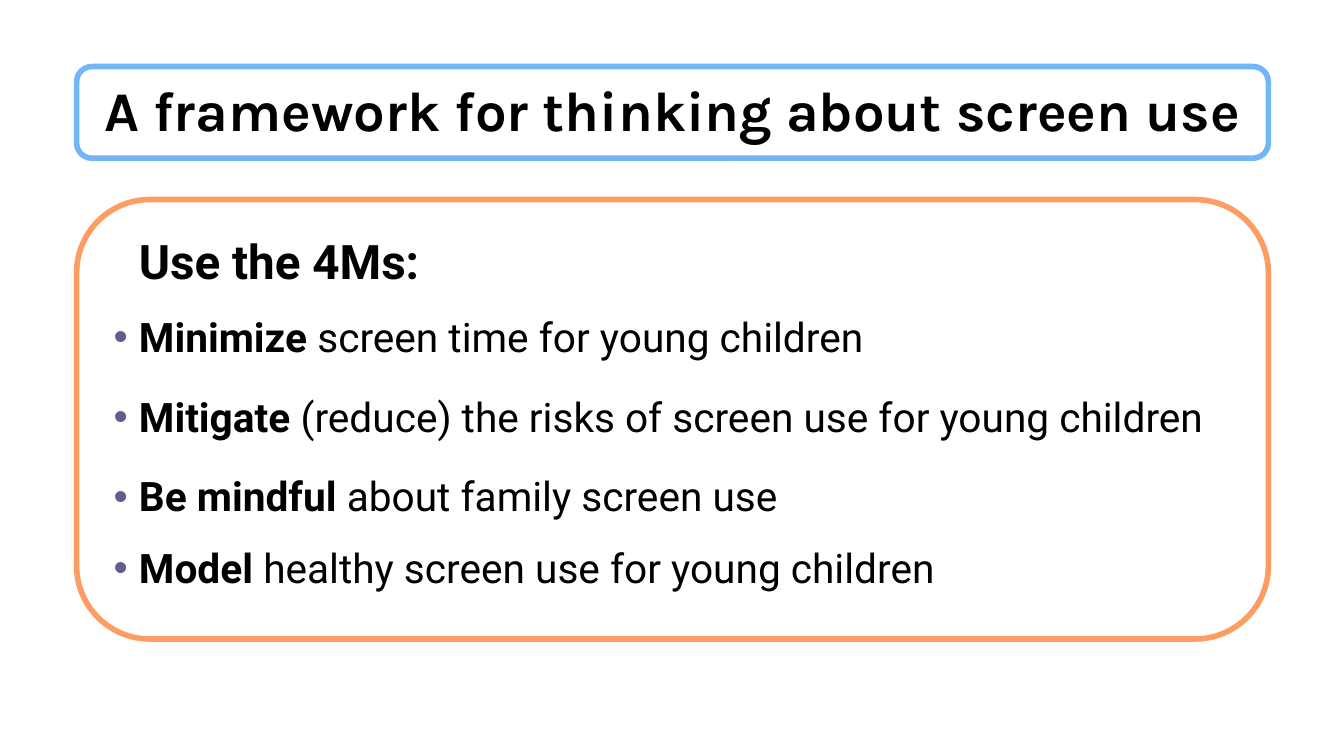
from lxml import etree
from pptx import Presentation
from pptx.dml.color import RGBColor
from pptx.enum.shapes import MSO_SHAPE
from pptx.enum.text import MSO_ANCHOR, PP_ALIGN
from pptx.oxml.ns import qn
from pptx.util import Inches, Pt

ROUNDED = MSO_SHAPE.ROUNDED_RECTANGLE
TOP, MIDDLE = MSO_ANCHOR.TOP, MSO_ANCHOR.MIDDLE
LEFT, CENTER = PP_ALIGN.LEFT, PP_ALIGN.CENTER

COLORS = {
    "text": "000000",
    "bullet": "625D90",
    "title_frame": "73B6F7",
    "list_frame": "FD9D62",
}


class SlideBuilder:
    line_spacing = 0.9
    frame_width = 4
    hanging_indent = 0.25

    def __init__(self, page):
        self.page = page

    def frame(self, left, top, width, height, color):
        shape = self.page.shapes.add_shape(
            ROUNDED, Inches(left), Inches(top), Inches(width), Inches(height))
        shape.shadow.inherit = False
        shape.fill.background()
        shape.line.color.rgb = RGBColor.from_string(COLORS[color])
        shape.line.width = Pt(self.frame_width)

    def text(self, left, top, width, height, spans, font, size,
             anchor=MIDDLE, align=LEFT, bulleted=False):
        box = self.page.shapes.add_textbox(
            Inches(left), Inches(top), Inches(width), Inches(height))
        box.text_frame.word_wrap = True
        box.text_frame.vertical_anchor = anchor
        para = box.text_frame.paragraphs[0]
        para.alignment = align
        para.line_spacing = self.line_spacing
        if bulleted:
            self.bullet(para)
        for words, bold in spans:
            span = para.add_run()
            span.text = words
            span.font.name = font
            span.font.size = Pt(size)
            span.font.bold = bold
            span.font.color.rgb = RGBColor.from_string(COLORS["text"])

    def bullet(self, para):
        properties = para._p.get_or_add_pPr()
        indent = Inches(self.hanging_indent)
        properties.set("marL", str(indent))
        properties.set("indent", str(-indent))
        color = etree.SubElement(properties, qn("a:buClr"))
        etree.SubElement(color, qn("a:srgbClr"), val=COLORS["bullet"])
        etree.SubElement(properties, qn("a:buFont"), typeface="Arial")
        etree.SubElement(properties, qn("a:buChar"), char="•")


def main():
    deck = Presentation()
    deck.slide_width = Inches(13.33)
    deck.slide_height = Inches(7.5)
    builder = SlideBuilder(deck.slides.add_slide(deck.slide_layouts[6]))

    builder.frame(0.76, 0.66, 11.82, 0.91, "title_frame")
    builder.frame(0.76, 1.98, 11.82, 4.36, "list_frame")
    builder.text(0.69, 0.4, 11.95, 1.45,
                 [("A framework for thinking about screen use", True)],
                 "Karla", 40, align=CENTER)
    builder.text(1.28, 1.89, 3.75, 1.45, [("Use the 4Ms:", True)], "Roboto", 34)

    habits = [
        (3.1, "Minimize", " screen time for young children"),
        (3.89, "Mitigate", " (reduce) the risks of screen use for young children"),
        (4.68, "Be mindful", " about family screen use"),
        (5.39, "Model", " healthy screen use for young children"),
    ]
    for top, habit, detail in habits:
        builder.text(1.03, top, 11.5, 0.6, [(habit, True), (detail, False)],
                     "Roboto", 29, anchor=TOP, bulleted=True)

    deck.save("out.pptx")


if __name__ == "__main__":
    main()
